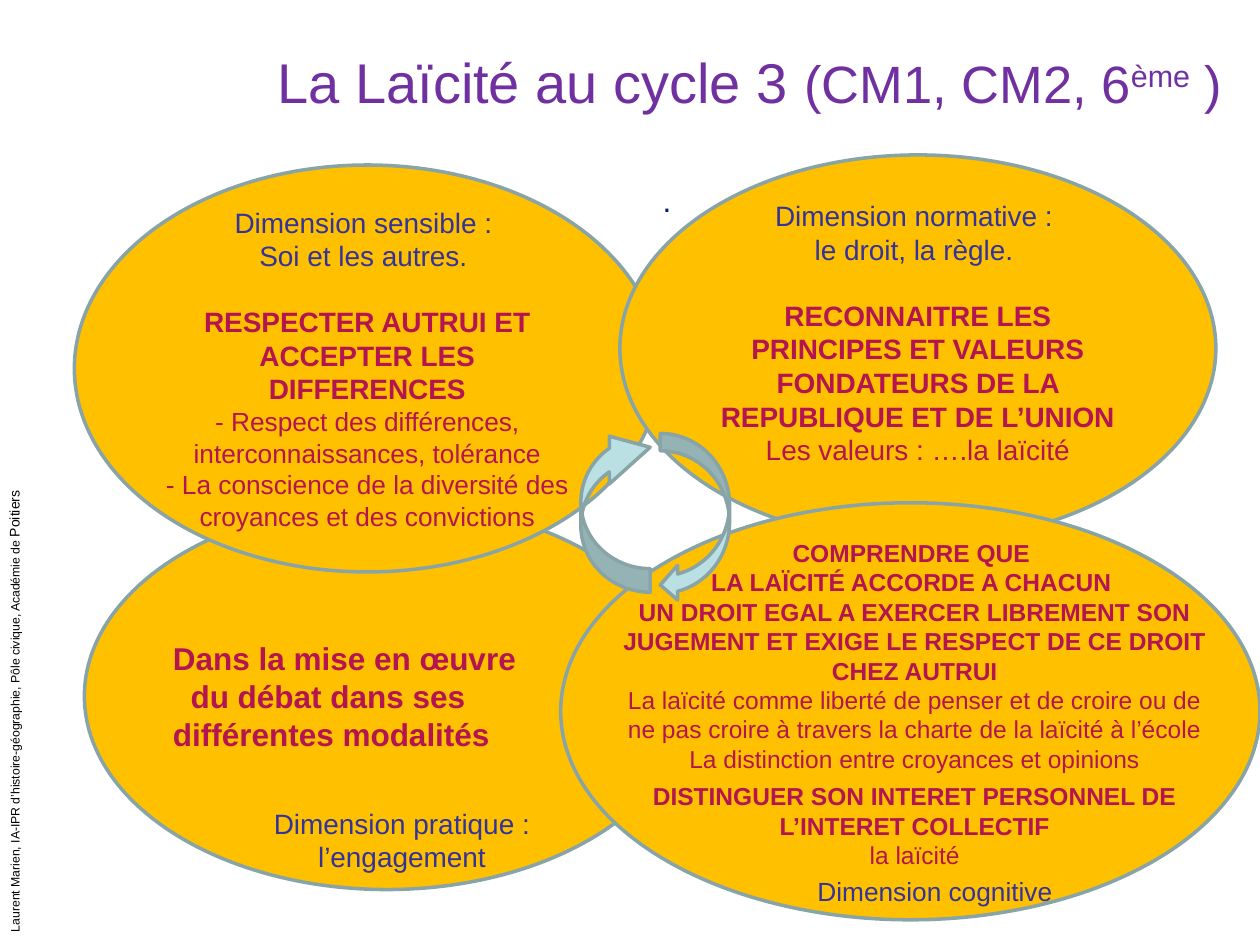
"""Build the slide on secularism in cycle 3: four overlapping dimensions."""
from pptx import Presentation
from pptx.dml.color import RGBColor
from pptx.enum.shapes import MSO_SHAPE as Shape
from pptx.enum.text import MSO_ANCHOR as Anchor, MSO_AUTO_SIZE as Fit, PP_ALIGN as Align
from pptx.util import Inches, Pt

PURPLE = RGBColor(0x70, 0x30, 0xA0)
ROSE = RGBColor(0xB4, 0x14, 0x50)
INDIGO = RGBColor(0x33, 0x33, 0x99)
NAVY = RGBColor(0x00, 0x20, 0x60)
BLACK = RGBColor(0, 0, 0)
GOLD = RGBColor(0xFF, 0xC0, 0x00)
AQUA = RGBColor(0xBB, 0xE0, 0xE3)
GREY = RGBColor(0x89, 0xA4, 0xA7)

TITLE = [("La Laïcité au cycle 3 ", 32), ("(CM1, CM2, 6", 30), ("ème", 30), (" )", 30)]
CREDIT = [("Laurent Marien, IA-IPR d’histoire-géographie, Pôle civique, Académie de ", 7),
          ("Poitiers", 8)]

# Each line: text, size, colour, bold, space before
DEBATE = [
    ("Dans la mise en œuvre", 18, ROSE, True, 0),
    ("du débat dans ses différentes modalités", 18, ROSE, True, 0),
]
FEELING = [
    ("Dimension sensible : ", 16, INDIGO, False, 0),
    ("Soi et les autres. ", 16, INDIGO, False, 0),
    ("RESPECTER AUTRUI ET ACCEPTER LES DIFFERENCES", 16, ROSE, True, 18.4),
    ("- Respect des différences, interconnaissances, tolérance", 15, ROSE, False, 0),
    ("- La conscience de la diversité des croyances et des convictions", 15, ROSE, False, 0),
]
RULES = [
    ("Dimension normative : ", 16, INDIGO, False, 0),
    ("le droit, la règle. ", 16, INDIGO, False, 0),
    ("RECONNAITRE LES PRINCIPES ET VALEURS FONDATEURS DE LA REPUBLIQUE ET DE L’UNION",
     16, ROSE, True, 18.4),
    ("Les valeurs : ….la laïcité", 16, ROSE, False, 0),
]
THINKING = [
    ("COMPRENDRE QUE ", 14, ROSE, True, 0),
    ("LA LAÏCITÉ ACCORDE A CHACUN ", 14, ROSE, True, 0),
    ("UN DROIT EGAL A EXERCER LIBREMENT SON JUGEMENT ET EXIGE LE RESPECT "
     "DE CE DROIT CHEZ AUTRUI", 14, ROSE, True, 0),
    ("La laïcité comme liberté de penser et de croire ou de ne pas croire "
     "à travers la charte de la laïcité à l’école", 14, ROSE, False, 0),
    ("La distinction entre croyances et opinions", 14, ROSE, False, 0),
    ("DISTINGUER SON INTERET PERSONNEL DE L’INTERET COLLECTIF", 14, ROSE, True, 4.6),
    ("la laïcité", 14, ROSE, False, 0),
]

# Each oval: place, lines, alignment, bottom inset
OVALS = [
    ((0.67, 3.99, 4.8, 3.07), DEBATE, Align.LEFT, 0.01),
    ((0.59, 1.31, 4.65, 3.23), FEELING, Align.CENTER, 0.01),
    ((4.92, 1.23, 4.73, 3.07), RULES, Align.CENTER, 0.26),
    ((4.45, 3.99, 5.55, 3.31), [], Align.CENTER, 0),
]
LABELS = [
    ((1.93, 6.35, 2.52, 0.64),
     [("Dimension pratique : l’engagement", 16, INDIGO, False, 0)], Align.CENTER),
    ((6.18, 6.9, 2.48, 0.35),
     [("Dimension cognitive", 15, INDIGO, False, 0)], Align.CENTER),
]
NOTES = [
    ((5.16, 1.39, 3.39, 0.4), [(".", 18, NAVY, False, 0)], Align.LEFT),
    ((4.76, 4.22, 5, 2.73), THINKING, Align.CENTER),
]
# Each arrow: place, rotation, adjustments
ARROWS = [
    ((4.61, 3.36, 0.55, 1.34), 180, (0.34, 0.69, 0.59)),
    ((5.24, 3.44, 0.55, 1.34), 0, ()),
]


def style(font, size, color, bold=False):
    font.name, font.size, font.bold = "Arial", Pt(size), bold
    font.color.rgb = color


def write(frame, lines, align):
    frame.word_wrap = True
    frame.text = "\n".join(line[0] for line in lines)
    for para, (_, size, color, bold, gap) in zip(frame.paragraphs, lines):
        para.alignment = align
        if gap:
            para.space_before = Pt(gap)
        for run in para.runs:
            style(run.font, size, color, bold)


def add_runs(para, parts, color):
    for text, size in parts:
        run = para.add_run()
        run.text = text
        style(run.font, size, color)


def add_form(slide, kind, place, fill):
    form = slide.shapes.add_shape(kind, *map(Inches, place))
    form.shadow.inherit = False
    form.fill.solid()
    form.fill.fore_color.rgb = fill
    form.line.color.rgb = GREY
    form.line.width = Pt(2)
    return form


def add_oval(slide, place, lines, align, bottom):
    frame = add_form(slide, Shape.OVAL, place, GOLD).text_frame
    frame.margin_left = frame.margin_right = 0
    frame.margin_top, frame.margin_bottom = Inches(0.01), Inches(bottom)
    frame.vertical_anchor = Anchor.MIDDLE
    write(frame, lines, align)
    return frame


def add_label(slide, place, lines, align):
    box = slide.shapes.add_textbox(*map(Inches, place))
    write(box.text_frame, lines, align)
    return box


def add_title(slide):
    title = slide.shapes.title
    title.left, title.top, title.width, title.height = map(Inches, (0.5, 0.3, 9.3, 0.69))
    frame = title.text_frame
    frame.auto_size, frame.vertical_anchor = Fit.NONE, Anchor.MIDDLE
    para = frame.paragraphs[0]
    para.alignment = Align.RIGHT
    add_runs(para, TITLE, PURPLE)
    para.runs[2].font._element.set("baseline", "30000")


def main():
    deck = Presentation()
    deck.slide_width, deck.slide_height = Inches(10), Inches(7.5)
    slide = deck.slides.add_slide(deck.slide_layouts[5])
    add_title(slide)
    frames = [add_oval(slide, *oval) for oval in OVALS]
    frames[0].paragraphs[1]._p.get_or_add_pPr().set("indent", str(Inches(0.14)))
    for label in LABELS:
        add_label(slide, *label)
    for place, turn, bends in ARROWS:
        arrow = add_form(slide, Shape.CURVED_LEFT_ARROW, place, AQUA)
        arrow.rotation = turn
        for i, bend in enumerate(bends):
            arrow.adjustments[i] = bend
    credit = add_label(slide, (-2.64, 4.62, 5.51, 0.24), [], Align.LEFT)
    credit.rotation = 270
    add_runs(credit.text_frame.paragraphs[0], CREDIT, BLACK)
    for note in NOTES:
        add_label(slide, *note)
    deck.save("out.pptx")


if __name__ == "__main__":
    main()
